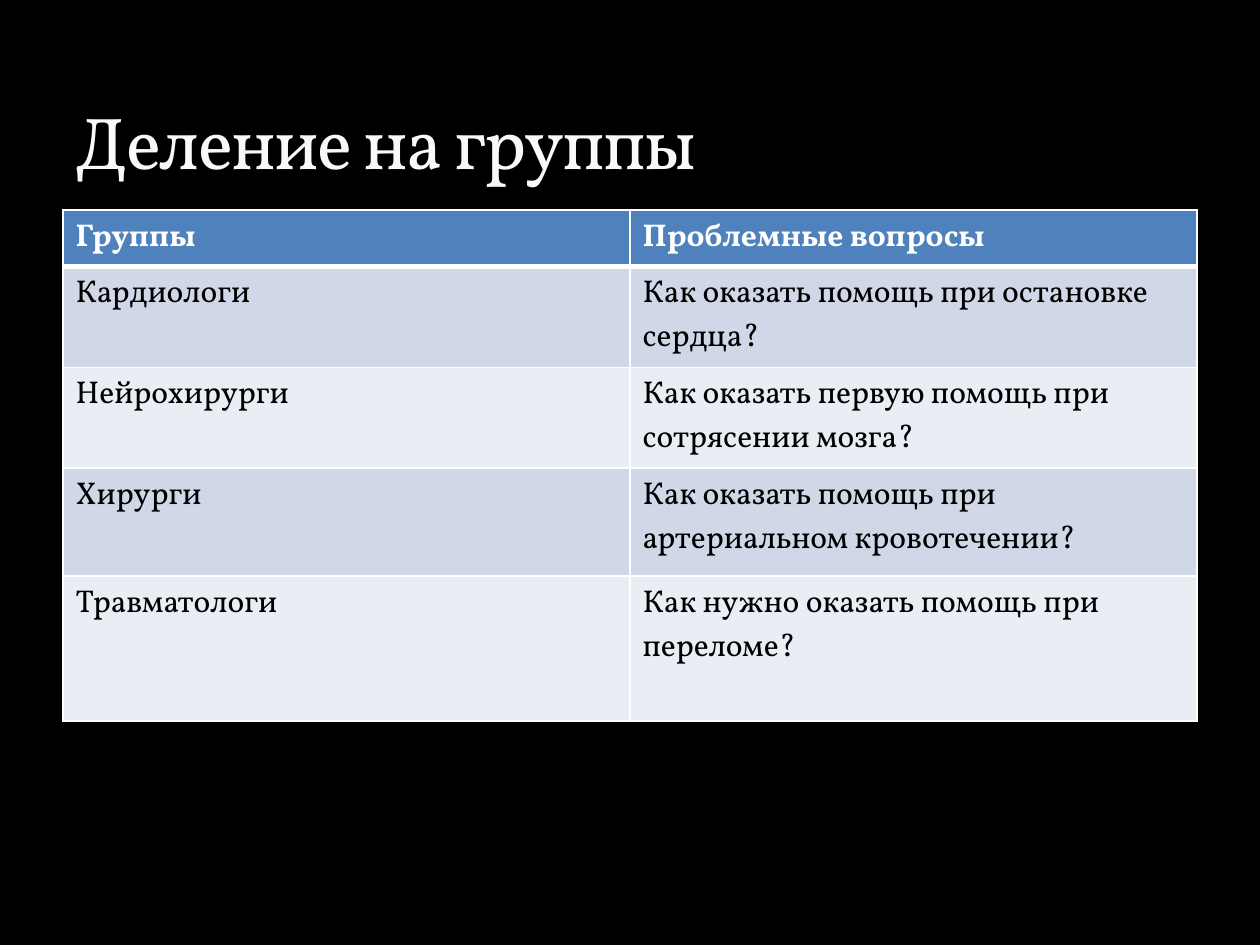
from dataclasses import dataclass

from lxml.etree import SubElement
from pptx import Presentation
from pptx.dml.color import RGBColor
from pptx.enum.text import MSO_ANCHOR
from pptx.oxml.ns import qn
from pptx.util import Pt

PX = 914400 // 126
FONT = "Vollkorn"
WHITE, BLACK, HEADER = "FFFFFF", "000000", "4F81BD"
BANDS = ("D0D8E8", "E9EDF4")


@dataclass(frozen=True)
class Row:
    group: str
    question: str
    height: int


ROWS = (
    Row("Группы", "Проблемные вопросы", 56),
    Row("Кардиологи", "Как оказать помощь при остановке сердца?", 101),
    Row("Нейрохирурги", "Как оказать первую помощь при сотрясении мозга?", 100),
    Row("Хирурги", "Как оказать помощь при артериальном кровотечении?", 108),
    Row("Травматологи", "Как нужно оказать помощь при переломе?", 145),
)


def px(n: int) -> int:
    return n * PX


def rgb(color: str) -> RGBColor:
    return RGBColor.from_string(color)


def add_run(p, text: str, size: int, color: str, bold: bool = False):
    r = p.add_run()
    r.text = text
    r.font.name = FONT
    r.font.size = Pt(size)
    r.font.bold = bold
    r.font.color.rgb = rgb(color)
    return r


def set_borders(cell, bottom: int) -> None:
    pr = cell._tc.get_or_add_tcPr()
    for i, (side, width) in enumerate((("L", 1), ("R", 1), ("T", 1), ("B", bottom))):
        ln = pr.makeelement(qn(f"a:ln{side}"), {"w": str(Pt(width))})
        fill = SubElement(ln, qn("a:solidFill"))
        SubElement(fill, qn("a:srgbClr"), val=WHITE)
        pr.insert(i, ln)


def add_title(s, text: str) -> None:
    sp = s.shapes.add_textbox(px(63), px(21), px(1134), px(168))
    tf = sp.text_frame
    tf.word_wrap = True
    tf.vertical_anchor = MSO_ANCHOR.TOP
    tf.margin_top = px(75)
    tf.margin_bottom = 0
    r = add_run(tf.paragraphs[0], text, 42, "F9F9F9")
    r.font._element.set("spc", "-100")


def add_groups_table(s, rows: tuple[Row, ...]) -> None:
    height = sum(row.height for row in rows)
    table = s.shapes.add_table(len(rows), 2, px(63), px(210), px(1134), px(height)).table
    for i, row in enumerate(rows):
        table.rows[i].height = px(row.height)
        header = i == 0
        for j, text in enumerate((row.group, row.question)):
            cell = table.cell(i, j)
            cell.fill.solid()
            cell.fill.fore_color.rgb = rgb(HEADER if header else BANDS[(i - 1) % 2])
            set_borders(cell, 3 if header else 1)
            add_run(cell.text_frame.paragraphs[0], text, 18,
                    WHITE if header else BLACK, header)


def main() -> None:
    prs = Presentation()
    prs.slide_width, prs.slide_height = px(1260), px(945)
    s = prs.slides.add_slide(prs.slide_layouts[6])
    s.background.fill.solid()
    s.background.fill.fore_color.rgb = rgb(BLACK)
    add_groups_table(s, ROWS)
    add_title(s, "Деление на группы")
    prs.save("out.pptx")


if __name__ == "__main__":
    main()
